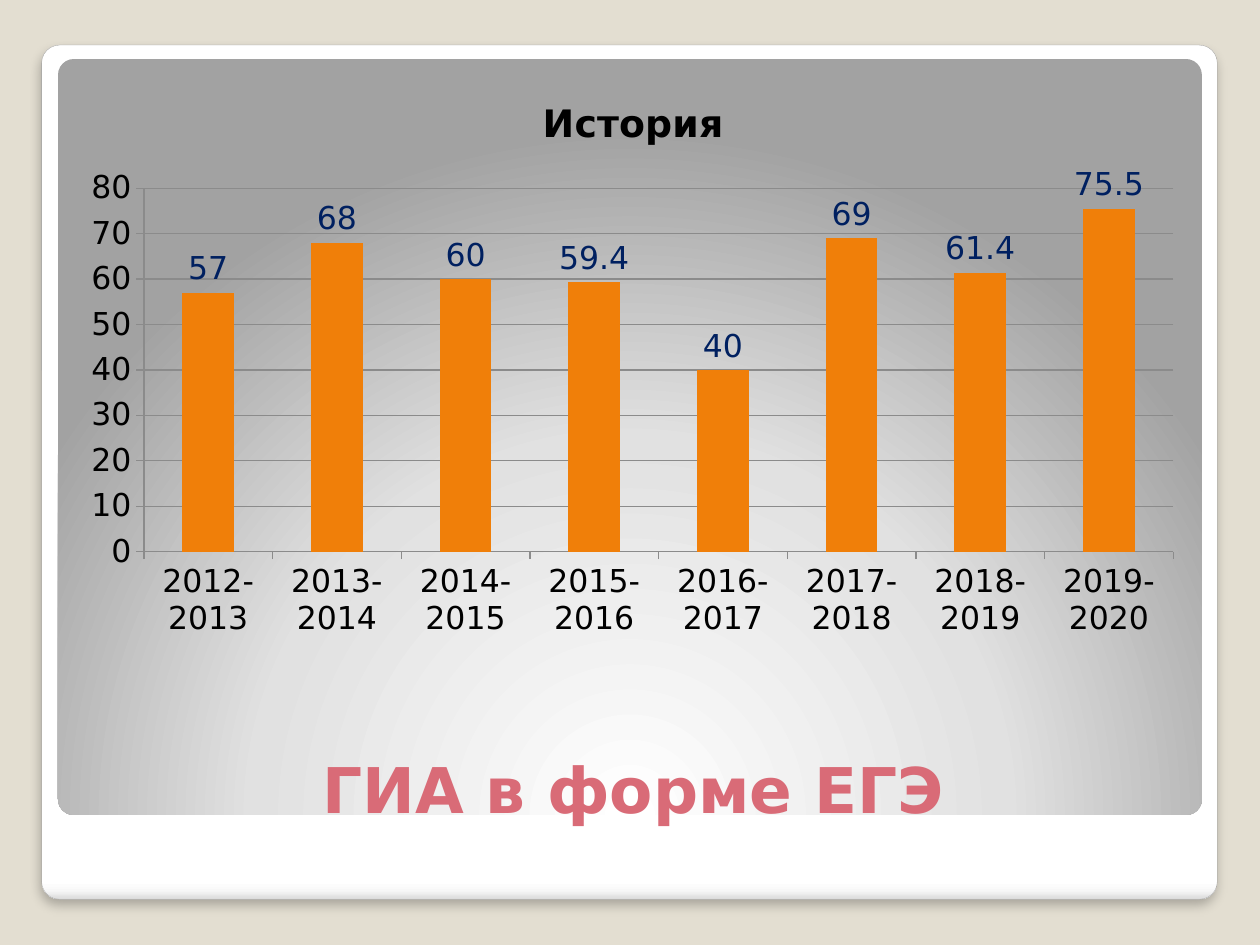
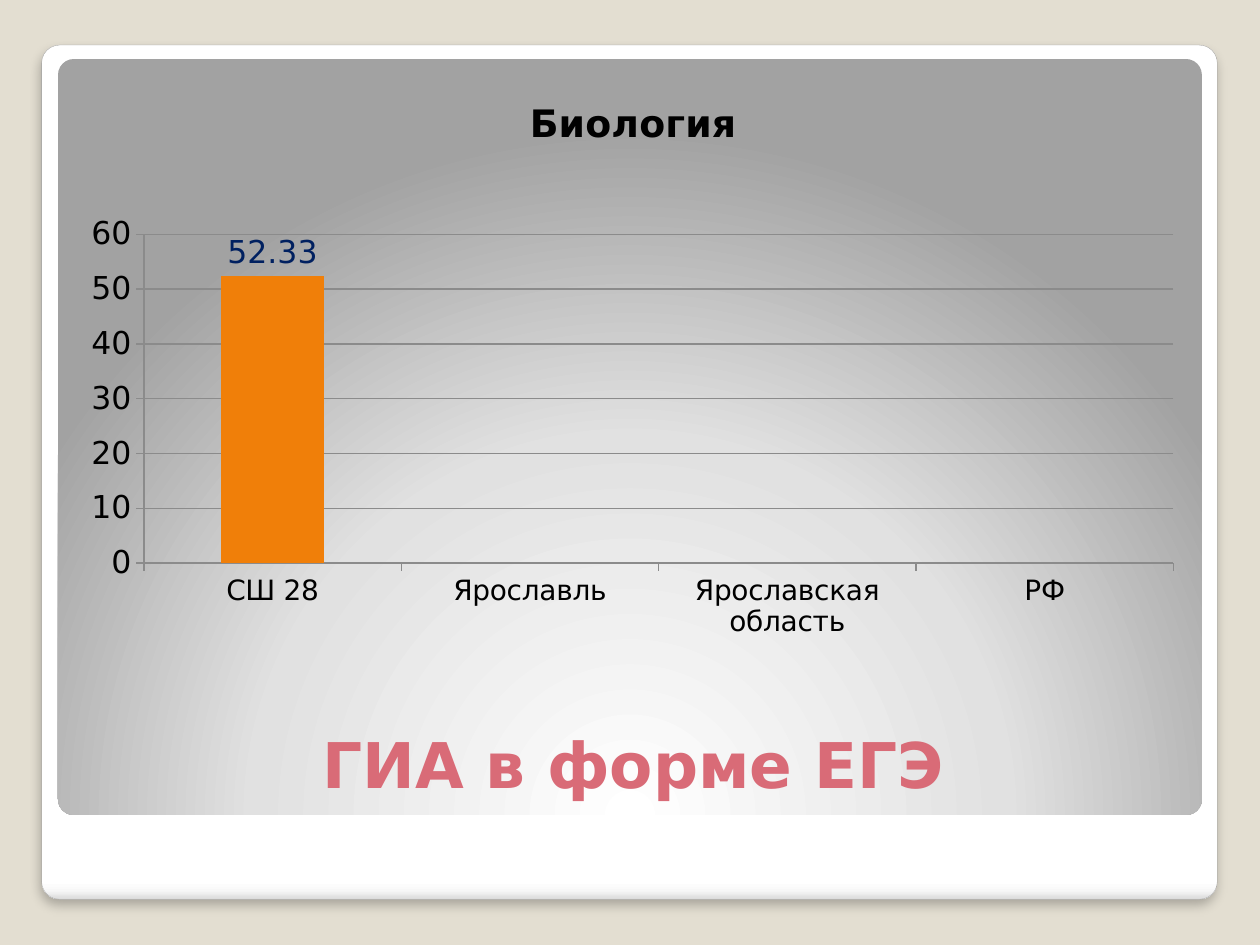
from dataclasses import dataclass

from lxml import etree
from pptx import Presentation
from pptx.chart.data import CategoryChartData
from pptx.dml.color import RGBColor
from pptx.enum.chart import XL_CHART_TYPE as ChartType
from pptx.enum.chart import XL_LABEL_POSITION as LabelPos
from pptx.enum.chart import XL_TICK_MARK as Tick
from pptx.enum.shapes import MSO_SHAPE as Shape
from pptx.enum.text import MSO_ANCHOR as Anchor
from pptx.enum.text import PP_ALIGN as Align
from pptx.oxml import parse_xml
from pptx.oxml.ns import qn
from pptx.util import Cm, Pt

# Content; the plot's top and height are shares of the chart's height
HEADING = "ГИА в форме ЕГЭ"
SLIDES = [
    dict(
        subject="История",
        scores=[("2012-2013", 57), ("2013-2014", 68), ("2014-2015", 60),
                ("2015-2016", 59.4), ("2016-2017", 40), ("2017-2018", 69),
                ("2018-2019", 61.4), ("2019-2020", 75.5)],
        top_score=80, category_size=18, plot=(0.2, 0.63), heading_bottom=16.76,
    ),
    dict(
        subject="Биология",
        scores=[("СШ 28", 52.33), ("Ярославль", None),
                ("Ярославская область", None), ("РФ", None)],
        top_score=60, category_size=16, plot=(0.28, 0.57), heading_bottom=16.26,
    ),
]


@dataclass(frozen=True)
class Theme:
    font: str = "DejaVu Sans"
    background: str = "E3DED1"
    card_line: str = "A4A4A4"
    heading: str = "D96B77"
    text: str = "000000"
    bar: str = "F07F09"
    value: str = "002060"
    grid: str = "8B8B8B"
    card_stops: tuple = ((0, "FFFFFF"), (98, "FFFFFF"), (99, "F7F7F7"), (100, "DADADA"))
    panel_stops: tuple = ((0, "FFFFFF"), (55, "E1E1E1"), (100, "A2A2A2"))
    heading_size: float = 36
    subject_size: float = 21.6
    chart_size: float = 18


THEME = Theme()
CARD = (0.84, 0.91, 23.7, 17.22)
PANEL = (1.17, 1.19, 23.06, 15.24)
LEFT, WIDTH = 1.4, 22.73
CHART_TOP, CHART_HEIGHT = 1.47, 11.63
HEADING_HEIGHT = 2.92
PLOT_LEFT, PLOT_WIDTH = 0.066, 0.913

A_NS = 'xmlns:a="http://schemas.openxmlformats.org/drawingml/2006/main"'
LINEAR = '<a:lin ang="5400000" scaled="0"/>'
RADIAL = ('<a:path path="circle">'
          '<a:fillToRect l="50000" t="175000" r="50000" b="-75000"/></a:path>')
SHADOW = (f'<a:outerShdw {A_NS} blurRad="76200" dist="50800" dir="5400000" '
          'algn="t" rotWithShape="0"><a:srgbClr val="000000">'
          '<a:alpha val="25000"/></a:srgbClr></a:outerShdw>')


def rgb(value):
    return RGBColor.from_string(value)


def style_font(font, size, color, bold=False):
    font.name, font.size, font.bold = THEME.font, Pt(size), bold
    font.color.rgb = rgb(color)


def add_round_box(slide, box, stops, direction):
    sp = slide.shapes.add_shape(Shape.ROUNDED_RECTANGLE, *map(Cm, box))
    sp.adjustments[0] = 0.021
    sp.shadow.inherit = False
    sp.line.fill.background()
    sp.fill.background()
    marks = "".join(f'<a:gs pos="{pos * 1000}"><a:srgbClr val="{color}"/></a:gs>'
                    for pos, color in stops)
    gradient = parse_xml(f'<a:gradFill {A_NS} rotWithShape="1">'
                         f'<a:gsLst>{marks}</a:gsLst>{direction}</a:gradFill>')
    props = sp._element.spPr
    props.replace(props.find(qn("a:noFill")), gradient)
    return sp


def add_backdrop(slide):
    slide.background.fill.solid()
    slide.background.fill.fore_color.rgb = rgb(THEME.background)
    card = add_round_box(slide, CARD, THEME.card_stops, LINEAR)
    card.line.color.rgb = rgb(THEME.card_line)
    card.line.width = Pt(0.16)
    card._element.spPr.find(qn("a:effectLst")).append(parse_xml(SHADOW))
    add_round_box(slide, PANEL, THEME.panel_stops, RADIAL)


def add_heading(slide, bottom):
    sp = slide.shapes.add_textbox(Cm(LEFT), Cm(bottom - HEADING_HEIGHT),
                                  Cm(WIDTH), Cm(HEADING_HEIGHT))
    tf = sp.text_frame
    tf.word_wrap = True
    tf.vertical_anchor = Anchor.BOTTOM
    tf.margin_bottom = Cm(0.1)
    p = tf.paragraphs[0]
    p.text, p.alignment = HEADING, Align.CENTER
    style_font(p.runs[0].font, THEME.heading_size, THEME.heading, True)


def place_plot(chart, top, height):
    """Fix the inner plot area as shares of the chart."""
    area = chart._chartSpace.chart.plotArea
    for old in area.findall(qn("c:layout")):
        area.remove(old)
    layout = etree.Element(qn("c:layout"))
    manual = etree.SubElement(layout, qn("c:manualLayout"))
    for tag, value in [("layoutTarget", "inner"), ("xMode", "edge"), ("yMode", "edge"),
                       ("x", PLOT_LEFT), ("y", top), ("w", PLOT_WIDTH), ("h", height)]:
        etree.SubElement(manual, qn(f"c:{tag}")).set("val", str(value))
    area.insert(0, layout)


def add_score_chart(slide, subject, scores, top_score, category_size, plot):
    data = CategoryChartData()
    data.categories = [name for name, _ in scores]
    data.add_series("Series 1", [score for _, score in scores])
    chart = slide.shapes.add_chart(ChartType.COLUMN_CLUSTERED, Cm(LEFT), Cm(CHART_TOP),
                                   Cm(WIDTH), Cm(CHART_HEIGHT), data).chart
    style_font(chart.font, THEME.chart_size, THEME.text)
    chart.has_legend = False
    chart.has_title = True
    p = chart.chart_title.text_frame.paragraphs[0]
    p.text = subject
    style_font(p.runs[0].font, THEME.subject_size, THEME.text, True)

    # Axes and gridlines
    scale, names = chart.value_axis, chart.category_axis
    scale.minimum_scale, scale.maximum_scale, scale.major_unit = 0, top_score, 10
    scale.has_major_gridlines = True
    for axis, size in [(scale, THEME.chart_size), (names, category_size)]:
        axis.major_tick_mark = Tick.OUTSIDE
        axis.format.line.color.rgb = rgb(THEME.grid)
        style_font(axis.tick_labels.font, size, THEME.text)
    scale.major_gridlines.format.line.color.rgb = rgb(THEME.grid)

    # Bars and their values
    bars = chart.plots[0]
    bars.gap_width = 150
    bars.vary_by_categories = False
    fill = bars.series[0].format.fill
    fill.solid()
    fill.fore_color.rgb = rgb(THEME.bar)
    labels = bars.series[0].data_labels
    labels.show_value = True
    labels.position = LabelPos.OUTSIDE_END
    style_font(labels.font, THEME.chart_size, THEME.value)
    place_plot(chart, *plot)


def main():
    prs = Presentation()
    prs.slide_width, prs.slide_height = Cm(25.4), Cm(19.05)
    for content in SLIDES:
        slide = prs.slides.add_slide(prs.slide_layouts[6])
        add_backdrop(slide)
        add_heading(slide, content["heading_bottom"])
        add_score_chart(slide, content["subject"], content["scores"], content["top_score"],
                        content["category_size"], content["plot"])
    prs.save("out.pptx")


if __name__ == "__main__":
    main()
